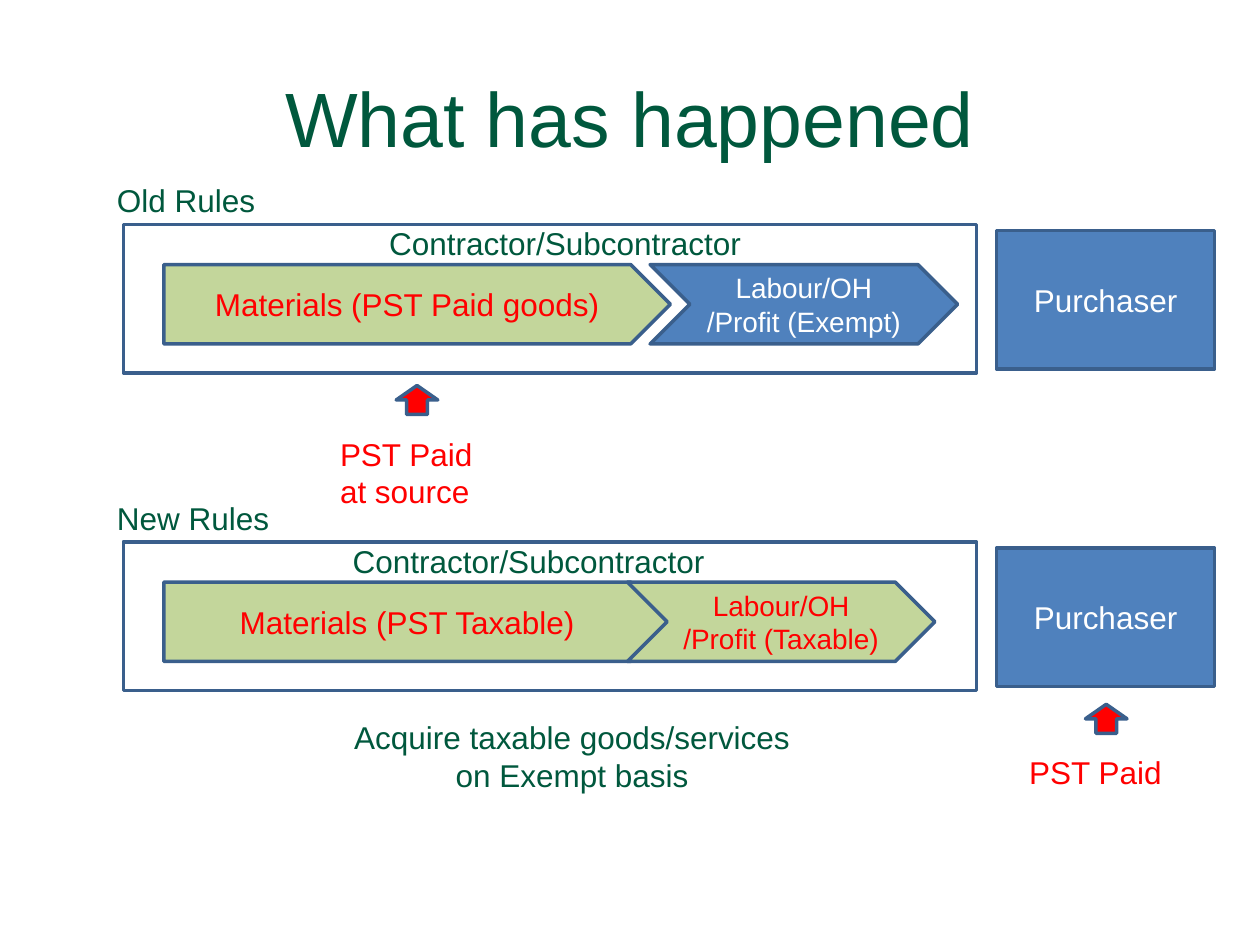
from pptx import Presentation
from pptx.dml.color import RGBColor
from pptx.enum.shapes import MSO_SHAPE
from pptx.enum.text import MSO_ANCHOR, PP_ALIGN
from pptx.util import Inches, Pt

RECT, PENTAGON = MSO_SHAPE.RECTANGLE, MSO_SHAPE.PENTAGON
CHEVRON, UP_ARROW = MSO_SHAPE.CHEVRON, MSO_SHAPE.UP_ARROW
LEFT, CENTER, MIDDLE = PP_ALIGN.LEFT, PP_ALIGN.CENTER, MSO_ANCHOR.MIDDLE

GREEN = RGBColor(0x00, 0x58, 0x3D)
LIGHT_GREEN = RGBColor(0xC3, 0xD6, 0x9B)
BLUE = RGBColor(0x4F, 0x81, 0xBD)
DARK_BLUE = RGBColor(0x3A, 0x5F, 0x8C)
RED = RGBColor(0xFF, 0x00, 0x00)
WHITE = RGBColor(0xFF, 0xFF, 0xFF)


def write(frame, lines, size, color, align):
    frame.word_wrap = True
    for i, line in enumerate(lines):
        paragraph = frame.paragraphs[0] if i == 0 else frame.add_paragraph()
        paragraph.alignment = align
        run = paragraph.add_run()
        run.text = line
        run.font.name = "Arial"
        run.font.size = Pt(size)
        run.font.color.rgb = color


def add_block(slide, kind, box, fill, lines=(), size=18, color=WHITE):
    block = slide.shapes.add_shape(kind, *map(Inches, box))
    block.shadow.inherit = False
    block.fill.solid()
    block.fill.fore_color.rgb = fill
    block.line.color.rgb = DARK_BLUE
    block.line.width = Pt(2)
    block.text_frame.vertical_anchor = MIDDLE
    write(block.text_frame, lines, size, color, CENTER)


def add_label(slide, box, text, color=GREEN, align=LEFT):
    label = slide.shapes.add_textbox(*map(Inches, box))
    write(label.text_frame, [text], 18, color, align)


def add_title(slide, box, text):
    title = slide.shapes.title
    title.left, title.top, title.width, title.height = map(Inches, box)
    title.text_frame.vertical_anchor = MIDDLE
    write(title.text_frame, [text], 44, GREEN, CENTER)


def add_rules(slide, box, heading, contractor_at, materials, labour, labour_at,
              labour_fill, labour_color):
    """Contractor frame with its two steps, and the purchaser beside it."""
    left, top, width, height = box
    # Contractor frame and steps
    add_block(slide, RECT, box, WHITE)
    add_block(slide, PENTAGON, (left + 0.32, top + 0.32, 4.02, 0.63),
              LIGHT_GREEN, [materials], color=RED)
    add_block(slide, CHEVRON, (left + labour_at, top + 0.32, 2.44, 0.63),
              labour_fill, labour, 16, labour_color)
    # Purchaser
    add_block(slide, RECT, (left + width + 0.16, top + 0.05, 1.73, 1.1),
              BLUE, ["Purchaser"])
    # Labels
    add_label(slide, (left + contractor_at, top - 0.05, 4.25, 0.4),
              "Contractor/Subcontractor")
    add_label(slide, (left - 0.15, top - 0.39, 1.73, 0.4), heading)


def add_tax_point(slide, box, text):
    """Red arrow centred over the place where the tax is paid."""
    left, top, width, height = box
    add_block(slide, UP_ARROW, (left + width / 2 - 0.16, top, 0.33, 0.23), RED)
    add_label(slide, (left, top + 0.34, width, height - 0.34), text, RED)


def main():
    prs = Presentation()
    prs.slide_width, prs.slide_height = Inches(10), Inches(7.5)
    slide = prs.slides.add_slide(prs.slide_layouts[5])

    add_title(slide, (0.5, 0.3, 9, 1.25), "What has happened")

    # Old rules: tax paid at source
    add_rules(slide, (0.98, 1.78, 6.77, 1.18), "Old Rules", 2.01,
              "Materials (PST Paid goods)", ["Labour/OH", "/Profit (Exempt)"],
              4.18, BLUE, WHITE)
    add_tax_point(slide, (2.6, 3.06, 1.41, 1.05), "PST Paid at source")

    # New rules: tax paid by the purchaser
    add_rules(slide, (0.98, 4.3, 6.77, 1.18), "New Rules", 1.72,
              "Materials (PST Taxable)", ["Labour/OH", "/Profit (Taxable)"],
              4, LIGHT_GREEN, RED)
    add_tax_point(slide, (8.07, 5.59, 1.41, 0.74), "PST Paid")
    add_label(slide, (2.7, 5.65, 3.68, 0.71),
              "Acquire taxable goods/services on Exempt basis", align=CENTER)

    prs.save("out.pptx")


if __name__ == "__main__":
    main()
